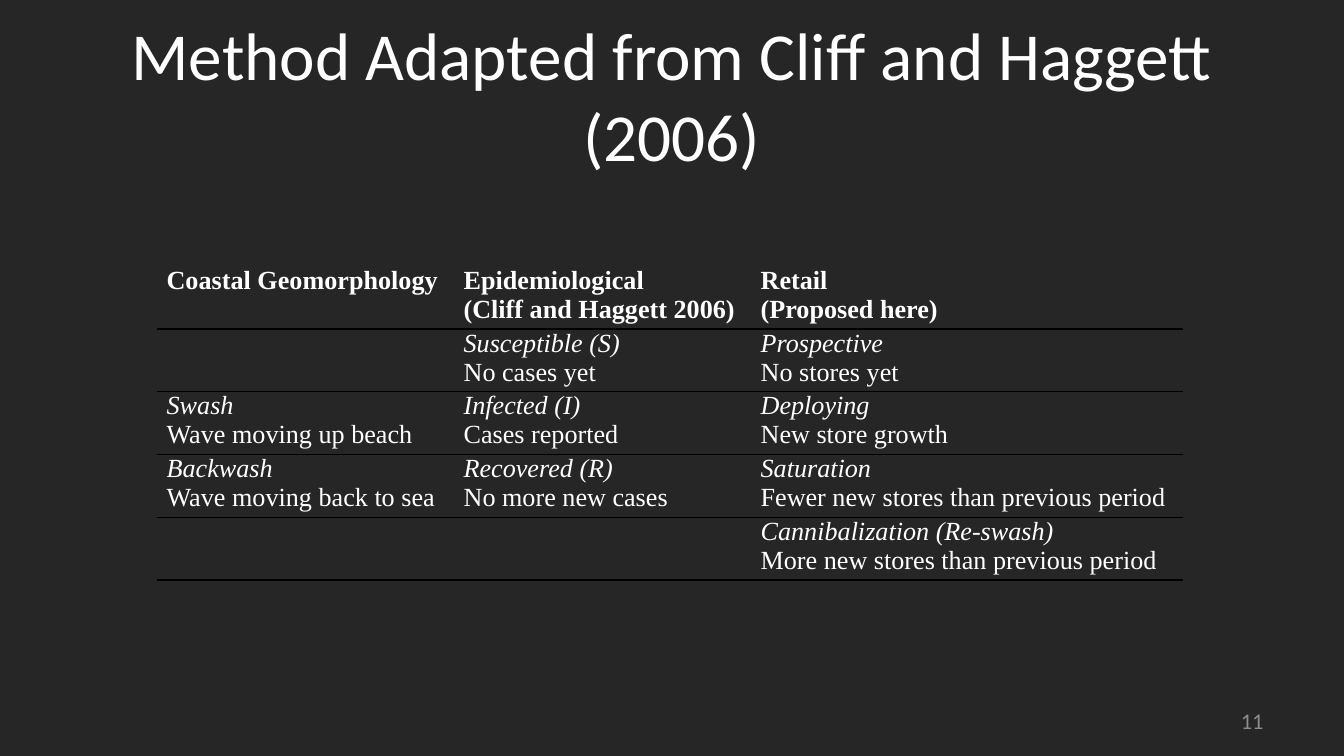
from lxml import etree
from pptx import Presentation
from pptx.dml.color import RGBColor
from pptx.enum.text import MSO_ANCHOR, PP_ALIGN
from pptx.oxml.ns import qn
from pptx.util import Inches, Pt

LEFT, CENTER, RIGHT = PP_ALIGN.LEFT, PP_ALIGN.CENTER, PP_ALIGN.RIGHT
MIDDLE = MSO_ANCHOR.MIDDLE

COLUMN_WIDTHS = [2.21, 2.21, 3.21]
ROW_HEIGHT = 0.35
RULES = [0, 1, 0.5, 0.5, 0.5, 1]  # points, from the top edge down
ROWS = [
    [["Coastal Geomorphology"],
     ["Epidemiological", "(Cliff and Haggett 2006)"],
     ["Retail", "(Proposed here)"]],
    [[], ["Susceptible (S)", "No cases yet"], ["Prospective", "No stores yet"]],
    [["Swash", "Wave moving up beach"],
     ["Infected (I)", "Cases reported"],
     ["Deploying", "New store growth"]],
    [["Backwash", "Wave moving back to sea"],
     ["Recovered (R)", "No more new cases"],
     ["Saturation", "Fewer new stores than previous period"]],
    [[], [], ["Cannibalization (Re-swash)", "More new stores than previous period"]],
]


def color(value):
    return RGBColor.from_string(value)


class Page:
    HEADING_FONT = "Calibri"
    TABLE_FONT = "Times New Roman"
    TABLE_SIZE = 14
    TEXT = "FFFFFF"
    MUTED = "8C8C8C"
    RULE = "000000"

    def __init__(self, deck, background):
        self.slide = deck.slides.add_slide(deck.slide_layouts[6])
        fill = self.slide.background.fill
        fill.solid()
        fill.fore_color.rgb = color(background)

    def style(self, para, font, size, shade, align=LEFT, bold=False, italic=False):
        para.alignment = align
        para.font.name = font
        para.font.size = Pt(size)
        para.font.color.rgb = color(shade)
        para.font.bold = bold
        para.font.italic = italic

    def text(self, words, left, top, width, height, size, shade, align):
        box = self.slide.shapes.add_textbox(
            Inches(left), Inches(top), Inches(width), Inches(height))
        frame = box.text_frame
        frame.word_wrap = True
        frame.vertical_anchor = MIDDLE
        frame.text = words
        self.style(frame.paragraphs[0], self.HEADING_FONT, size, shade, align)

    def borders(self, cell, top, bottom):
        """Rule the top and bottom edges in points; zero clears an edge."""
        properties = cell._tc.get_or_add_tcPr()
        edges = {"lnL": 0, "lnR": 0, "lnT": top, "lnB": bottom}
        for position, (side, width) in enumerate(edges.items()):
            line = etree.Element(qn("a:" + side))
            if width:
                line.set("w", str(Pt(width)))
                fill = etree.SubElement(line, qn("a:solidFill"))
                etree.SubElement(fill, qn("a:srgbClr"), val=self.RULE)
            else:
                etree.SubElement(line, qn("a:noFill"))
            properties.insert(position, line)

    def cell(self, cell, lines, header, top, bottom):
        cell.margin_left = cell.margin_right = Inches(0.07)
        cell.margin_top = cell.margin_bottom = 0
        cell.fill.background()
        cell.text = "\n".join(lines)
        for number, para in enumerate(cell.text_frame.paragraphs):
            self.style(para, self.TABLE_FONT, self.TABLE_SIZE, self.TEXT,
                       bold=header, italic=not header and number == 0)
            etree.SubElement(para._p, qn("a:endParaRPr"),
                             sz=str(self.TABLE_SIZE * 100))
        self.borders(cell, top, bottom)

    def table(self, rows, left, top, height, widths, row_height, rules):
        frame = self.slide.shapes.add_table(
            len(rows), len(widths), Inches(left), Inches(top),
            Inches(sum(widths)), Inches(height))
        table = frame.table
        table.first_row = table.horz_banding = False
        for column, width in zip(table.columns, widths):
            column.width = Inches(width)
        for index, row in enumerate(rows):
            table.rows[index].height = Inches(row_height)
            for column, lines in enumerate(row):
                self.cell(table.cell(index, column), lines, index == 0,
                          rules[index], rules[index + 1])
        frame.height = Inches(height)


def main():
    deck = Presentation()
    deck.slide_width = Inches(10)
    deck.slide_height = Inches(10 * 9 / 16)
    page = Page(deck, "262626")
    page.text("Method Adapted from Cliff and Haggett (2006)",
              0.5, 0.23, 9, 0.94, 36, page.TEXT, CENTER)
    page.table(ROWS, 1.17, 1.98, 2.33, COLUMN_WIDTHS, ROW_HEIGHT, RULES)
    page.text("11", 7.17, 5.21, 2.33, 0.3, 12, page.MUTED, RIGHT)
    deck.save("out.pptx")


if __name__ == "__main__":
    main()
